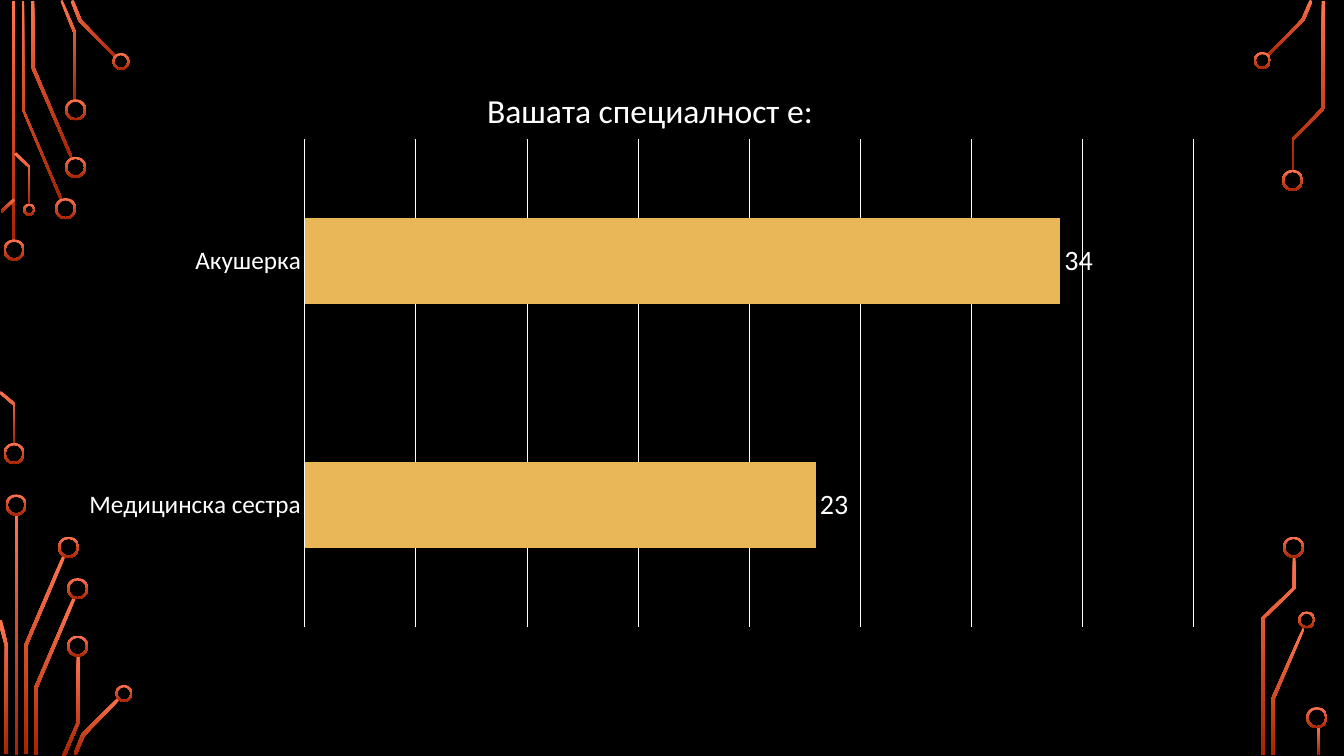
from dataclasses import dataclass

import lxml.etree
import pptx
import pptx.chart.data
import pptx.dml.color
import pptx.enum.chart
import pptx.enum.shapes
import pptx.oxml.ns
import pptx.util

Inches = pptx.util.Inches
Pt = pptx.util.Pt
RGBColor = pptx.dml.color.RGBColor
MSO_SHAPE = pptx.enum.shapes.MSO_SHAPE
qn = pptx.oxml.ns.qn

BLACK = RGBColor(0x00, 0x00, 0x00)
WHITE = RGBColor(0xFF, 0xFF, 0xFF)
CORAL = RGBColor(0xFF, 0x74, 0x4E)
RUST = RGBColor(0xA6, 0x24, 0x00)
GOLD = RGBColor(0xE9, 0xB7, 0x58)
FONT = "Calibri"
RIM = 0.02


@dataclass
class Wire:
    left: float
    top: float
    height: float
    width: float = 0.03


@dataclass
class Trace:
    outline: list[tuple[float, float]]


@dataclass
class Node:
    x: float
    y: float
    size: float = 0.21


WIRES = [Wire(0.12, 0.01, 2.39), Wire(0.15, 5.1, 2.39), Wire(13.06, 7.21, 0.28)]

TRACES = [
    Trace([(0.6, 1.99), (0.22, 1.09), (0.22, 0.01), (0.24, 0.01), (0.24, 1.09), (0.62, 1.98)]),
    Trace([(0.7, 1.57), (0.31, 0.67), (0.31, 0.01), (0.34, 0.01), (0.34, 0.66), (0.72, 1.56)]),
    Trace([(0.76, 1), (0.73, 1), (0.73, 0.33), (0.6, 0.01), (0.62, 0), (0.76, 0.33)]),
    Trace([(1.15, 0.58), (0.78, 0.21), (0.7, 0.01), (0.73, 0), (0.81, 0.2), (1.16, 0.56)]),
    Trace([(0.02, 2.11), (0.01, 2.09), (0.13, 1.97), (0.15, 1.99)]),
    Trace([(0.15, 4.41), (0.13, 4.41), (0.13, 4.02), (-0.01, 3.9), (0.01, 3.88), (0.15, 4)]),
    Trace([(0.3, 2.03), (0.28, 2.03), (0.28, 1.66), (0.14, 1.53), (0.16, 1.51), (0.3, 1.65)]),
    Trace([(0.27, 7.48), (0.24, 7.48), (0.24, 6.4), (0.62, 5.51), (0.65, 5.52), (0.27, 6.41)]),
    Trace([(0.08, 7.48), (0.05, 7.48), (0.05, 6.41), (-0.02, 6.16), (0.02, 6.15), (0.08, 6.41)]),
    Trace([(0.37, 7.49), (0.34, 7.49), (0.34, 6.82), (0.72, 5.93), (0.75, 5.94), (0.37, 6.83)]),
    Trace([(0.65, 7.5), (0.62, 7.49), (0.76, 7.17), (0.76, 6.5), (0.79, 6.5), (0.79, 7.17)]),
    Trace([(0.76, 7.49), (0.73, 7.48), (0.81, 7.28), (1.17, 6.92), (1.19, 6.94), (0.84, 7.3)]),
    Trace([(12.58, 0.56), (12.56, 0.55), (12.91, 0.19), (12.99, 0), (13.02, 0.01), (12.94, 0.2)]),
    Trace([(12.64, 7.49), (12.61, 7.49), (12.61, 6.93), (12.92, 6.23), (12.94, 6.24), (12.64, 6.94)]),
    Trace([(12.83, 1.69), (12.81, 1.69), (12.81, 1.38), (13.11, 1.07),
           (13.11, 0.01), (13.14, 0.01), (13.14, 1.08), (12.83, 1.39)]),
    Trace([(12.54, 7.49), (12.51, 7.49), (12.51, 6.13), (12.82, 5.83),
           (12.82, 5.52), (12.85, 5.52), (12.85, 5.84), (12.54, 6.14)]),
]

NODES = [
    Node(0.14, 2.48), Node(0.14, 4.5), Node(0.65, 2.07), Node(0.75, 1.66),
    Node(0.75, 1.09), Node(1.2, 0.61, 0.17), Node(0.29, 2.08, 0.12),
    Node(0.16, 5.01), Node(0.68, 5.43), Node(0.77, 5.84), Node(0.77, 6.41),
    Node(1.23, 6.88, 0.17), Node(12.52, 0.6, 0.17), Node(12.82, 1.79),
    Node(12.96, 6.15, 0.17), Node(12.83, 5.43), Node(13.06, 7.12),
]


def paint(shape) -> None:
    shape.shadow.inherit = False
    shape.line.fill.background()
    shape.fill.gradient()
    shape.fill.gradient_angle = 270
    for stop, color, position in zip(shape.fill.gradient_stops, (CORAL, RUST), (0, 1)):
        stop.color.rgb = color
        stop.position = position


def draw_wire(slide, wire: Wire) -> None:
    paint(slide.shapes.add_shape(
        MSO_SHAPE.RECTANGLE, Inches(wire.left), Inches(wire.top),
        Inches(wire.width), Inches(wire.height)))


def draw_trace(slide, trace: Trace) -> None:
    start, *rest = [(Inches(x), Inches(y)) for x, y in trace.outline]
    builder = slide.shapes.build_freeform(*start)
    builder.add_line_segments(rest, close=True)
    paint(builder.convert_to_shape())


def draw_node(slide, node: Node) -> None:
    ring = slide.shapes.add_shape(
        MSO_SHAPE.DONUT, Inches(node.x - node.size / 2), Inches(node.y - node.size / 2),
        Inches(node.size), Inches(node.size))
    ring.adjustments[0] = RIM / node.size
    paint(ring)


def set_font(font, size: int) -> None:
    font.name = FONT
    font.size = Pt(size)
    font.bold = False
    font.color.rgb = WHITE


def set_line(line) -> None:
    line.color.rgb = WHITE
    line.width = Pt(0.75)


def set_layout(part, **settings) -> None:
    layout = part.find(qn("c:layout"))
    if layout is None:
        layout = part.makeelement(qn("c:layout"))
        part.insert(0, layout)
    manual = lxml.etree.SubElement(layout, qn("c:manualLayout"))
    for tag, value in settings.items():
        lxml.etree.SubElement(manual, qn(f"c:{tag}")).set("val", str(value))


def draw_specialties(slide) -> None:
    answers = pptx.chart.data.CategoryChartData()
    answers.categories = ["Медицинска сестра", "Акушерка"]
    answers.add_series("Series 1", (23, 34))
    chart = slide.shapes.add_chart(
        pptx.enum.chart.XL_CHART_TYPE.BAR_CLUSTERED,
        Inches(0.66), Inches(0.58), Inches(11.42), Inches(5.75), answers).chart
    set_font(chart.font, 10)
    chart.has_legend = False

    chart.has_title = True
    question = chart.chart_title.text_frame.paragraphs[0].add_run()
    question.text = "Вашата специалност е:"
    set_font(question.font, 24)
    chart.chart_title.include_in_layout = False
    set_layout(chart.chart_title._element, xMode="edge", yMode="edge", x=0.36, y=0.04)

    specialties = chart.category_axis
    specialties.major_tick_mark = pptx.enum.chart.XL_TICK_MARK.NONE
    set_font(specialties.tick_labels.font, 18)
    set_line(specialties.format.line)

    counts = chart.value_axis
    counts.visible = False
    counts.minimum_scale, counts.maximum_scale, counts.major_unit = 0, 40, 5
    counts.has_major_gridlines = True
    set_line(counts.major_gridlines.format.line)

    bars = chart.plots[0]
    bars.gap_width = 182
    bars.vary_by_categories = False
    bars.series[0].format.fill.solid()
    bars.series[0].format.fill.fore_color.rgb = GOLD
    labels = bars.series[0].data_labels
    labels.show_value = True
    labels.position = pptx.enum.chart.XL_LABEL_POSITION.OUTSIDE_END
    set_font(labels.font, 20)
    set_layout(chart._chartSpace.chart.plotArea, layoutTarget="inner",
               xMode="edge", yMode="edge", x=0.207, y=0.139, w=0.772, h=0.842)


def main() -> None:
    deck = pptx.Presentation()
    deck.slide_width, deck.slide_height = Inches(13.33), Inches(7.5)
    slide = deck.slides.add_slide(deck.slide_layouts[6])
    slide.background.fill.solid()
    slide.background.fill.fore_color.rgb = BLACK
    for wire in WIRES:
        draw_wire(slide, wire)
    for trace in TRACES:
        draw_trace(slide, trace)
    for node in NODES:
        draw_node(slide, node)
    draw_specialties(slide)
    deck.save("out.pptx")


if __name__ == "__main__":
    main()
